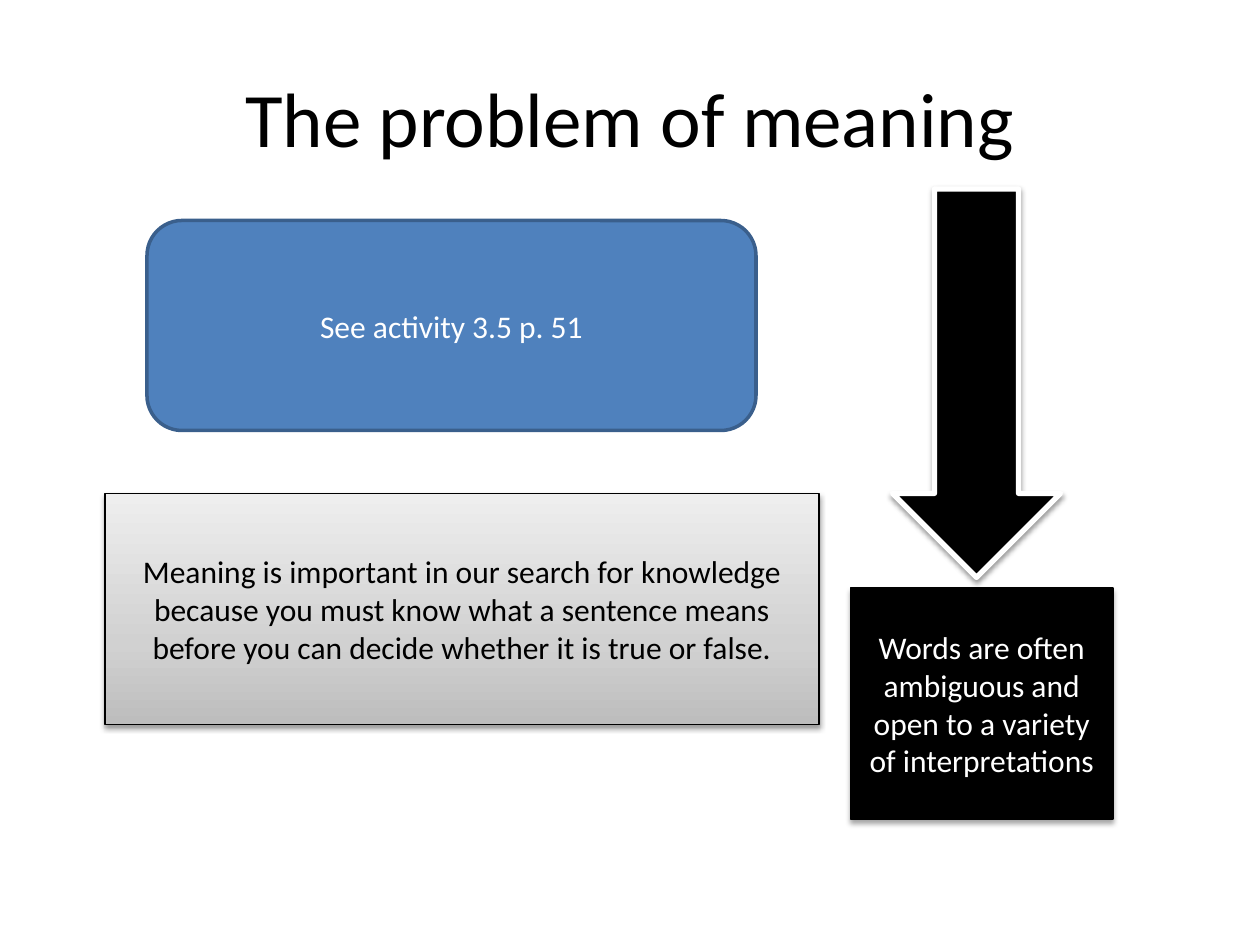
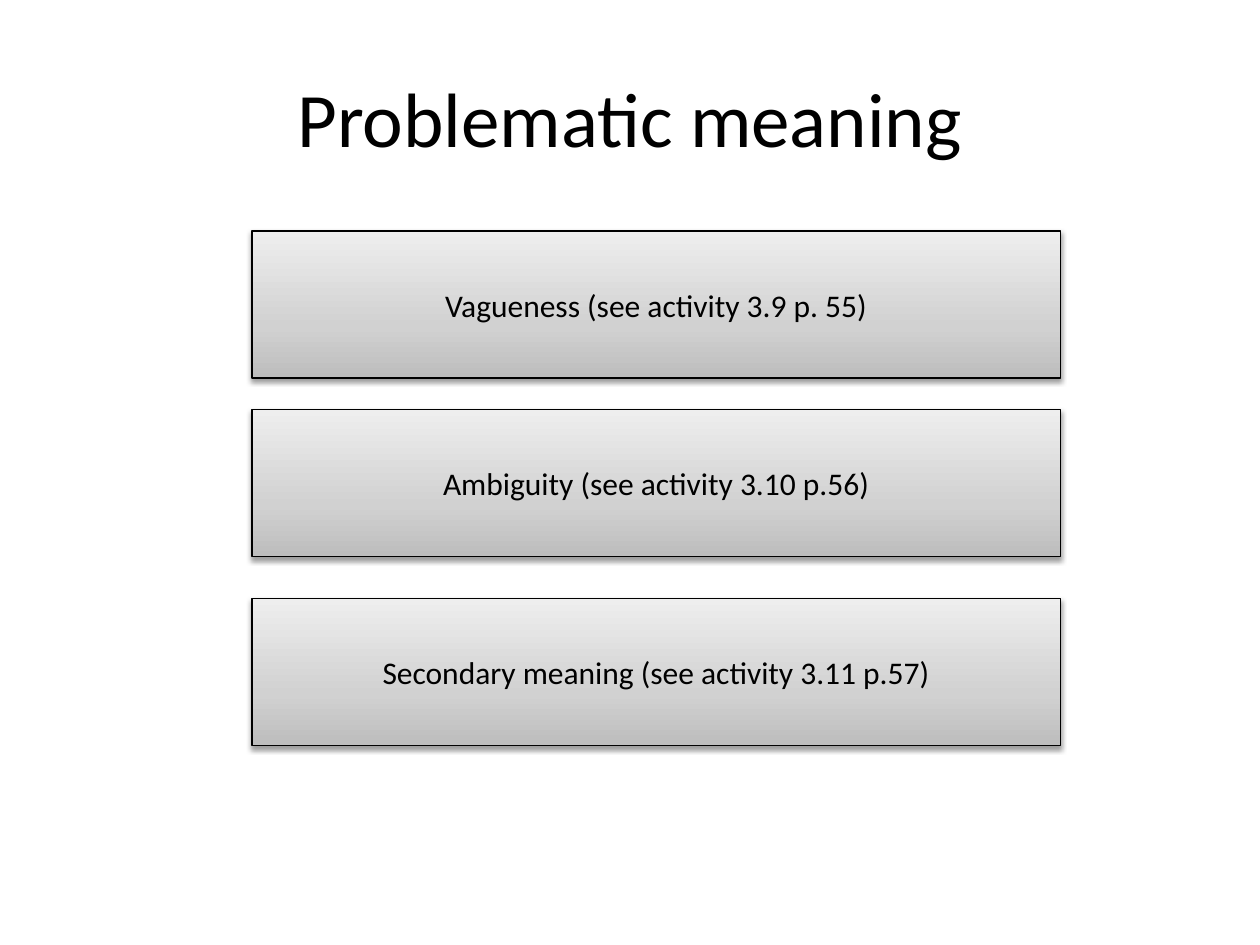
from copy import deepcopy

from lxml import etree
from pptx import Presentation
from pptx.dml import color as c
from pptx.enum import shapes, text
from pptx.oxml import ns
from pptx.util import Pt

FONT = "Calibri"
BLACK, WHITE = "000000", "FFFFFF"
SILVER = [(0, "BDBDBD"), (0.35, "D1D1D1"), (1, "EEEEEE")]
TITLE_BOX = (36, 21.6, 648, 90)
TITLE_ONLY = 5

BLUE_STYLE = dict(fill="4F81BD", line="3A5F8C", line_width=2, font=WHITE)
SILVER_STYLE = dict(fill=SILVER, line=BLACK, line_width=0.75, font=BLACK,
                    shadow=(38, 3.1, 1.6))
BLACK_STYLE = dict(fill=BLACK, line=BLACK, line_width=0.75, font=WHITE,
                   shadow=(35, 3.1, 1.8))
ARROW_STYLE = dict(fill=BLACK, line=WHITE, line_width=3, font=WHITE,
                   shadow=(38, 3.1, 1.6))


def rgb(value):
    return c.RGBColor.from_string(value)


def set_values(target, values):
    for name, value in values.items():
        setattr(target, name, value)


def place(shape, box):
    set_values(shape, dict(zip(("left", "top", "width", "height"), map(Pt, box))))


def write(shape, wording, size, font_color):
    frame = shape.text_frame
    frame.text = wording
    set_values(frame, dict(word_wrap=True, vertical_anchor=text.MSO_ANCHOR.MIDDLE))
    paragraph = frame.paragraphs[0]
    paragraph.alignment = text.PP_ALIGN.CENTER
    font = paragraph.runs[0].font
    set_values(font, dict(name=FONT, size=Pt(size)))
    font.color.rgb = rgb(font_color)


def fill_gradient(shape, stops):
    shape.fill.gradient()
    shape.fill.gradient_angle = 90
    stop_list = shape.element.spPr.find(".//" + ns.qn("a:gsLst"))
    while len(stop_list) < len(stops):
        stop_list.append(deepcopy(stop_list[-1]))
    for stop, (position, value) in zip(shape.fill.gradient_stops, stops):
        stop.position = position
        stop.color.rgb = rgb(value)


def add_shadow(shape, opacity, blur, distance):
    effects = shape.element.spPr.find(ns.qn("a:effectLst"))
    shadow = etree.SubElement(
        effects, ns.qn("a:outerShdw"), blurRad=str(Pt(blur)), dist=str(Pt(distance)),
        dir="5400000", rotWithShape="0")
    shade = etree.SubElement(shadow, ns.qn("a:srgbClr"), val=BLACK)
    etree.SubElement(shade, ns.qn("a:alpha"), val=str(opacity * 1000))


def add_block(slide, kind, box, style, wording=None):
    shape = slide.shapes.add_shape(kind, *map(Pt, box))
    if isinstance(style["fill"], list):
        fill_gradient(shape, style["fill"])
    else:
        shape.fill.solid()
        shape.fill.fore_color.rgb = rgb(style["fill"])
    shape.line.color.rgb = rgb(style["line"])
    shape.line.width = Pt(style["line_width"])
    shape.shadow.inherit = False
    if "shadow" in style:
        add_shadow(shape, *style["shadow"])
    if wording:
        write(shape, wording, 18, style["font"])


def add_titled_slide(presentation, title):
    slide = presentation.slides.add_slide(presentation.slide_layouts[TITLE_ONLY])
    place(slide.shapes.title, TITLE_BOX)
    write(slide.shapes.title, title, 44, BLACK)
    return slide


def add_meaning_column(slide, box):
    left, top, width, height = box
    kind = shapes.MSO_SHAPE
    inset = 24
    add_block(slide, kind.ROUNDED_RECTANGLE, (left + inset, top, 348, 120),
              BLUE_STYLE, "See activity 3.5 p. 51")
    add_block(slide, kind.RECTANGLE, (left, top + height - 132, width, 132), SILVER_STYLE,
              "Meaning is important in our search for knowledge because you must know "
              "what a sentence means before you can decide whether it is true or false.")


def add_ambiguity_column(slide, box):
    left, top, width, height = box
    kind = shapes.MSO_SHAPE
    arrow_width, arrow_height, gap = 96, 222, 6
    arrow_left = left + (width - arrow_width) / 2 - 3
    add_block(slide, kind.DOWN_ARROW, (arrow_left, top, arrow_width, arrow_height),
              ARROW_STYLE)
    used = arrow_height + gap
    add_block(slide, kind.RECTANGLE, (left, top + used, width, height - used), BLACK_STYLE,
              "Words are often ambiguous and open to a variety of interpretations")


def add_topic_rows(slide, box, topics):
    left, top, width, height = box
    for offset, topic in topics:
        add_block(slide, shapes.MSO_SHAPE.RECTANGLE, (left, top + offset, width, height),
                  SILVER_STYLE, topic)


def main():
    presentation = Presentation()
    set_values(presentation, dict(slide_width=Pt(720), slide_height=Pt(540)))

    slide = add_titled_slide(presentation, "The problem of meaning")
    add_meaning_column(slide, (60, 126, 408, 288))
    add_ambiguity_column(slide, (486, 108, 150, 360))

    slide = add_titled_slide(presentation, "Problematic meaning")
    add_topic_rows(slide, (144, 132, 462, 84), [
        (0, "Vagueness (see activity 3.9 p. 55)"),
        (102, "Ambiguity (see activity 3.10 p.56)"),
        (210, "Secondary meaning (see activity 3.11 p.57)"),
    ])

    presentation.save("out.pptx")


if __name__ == "__main__":
    main()
